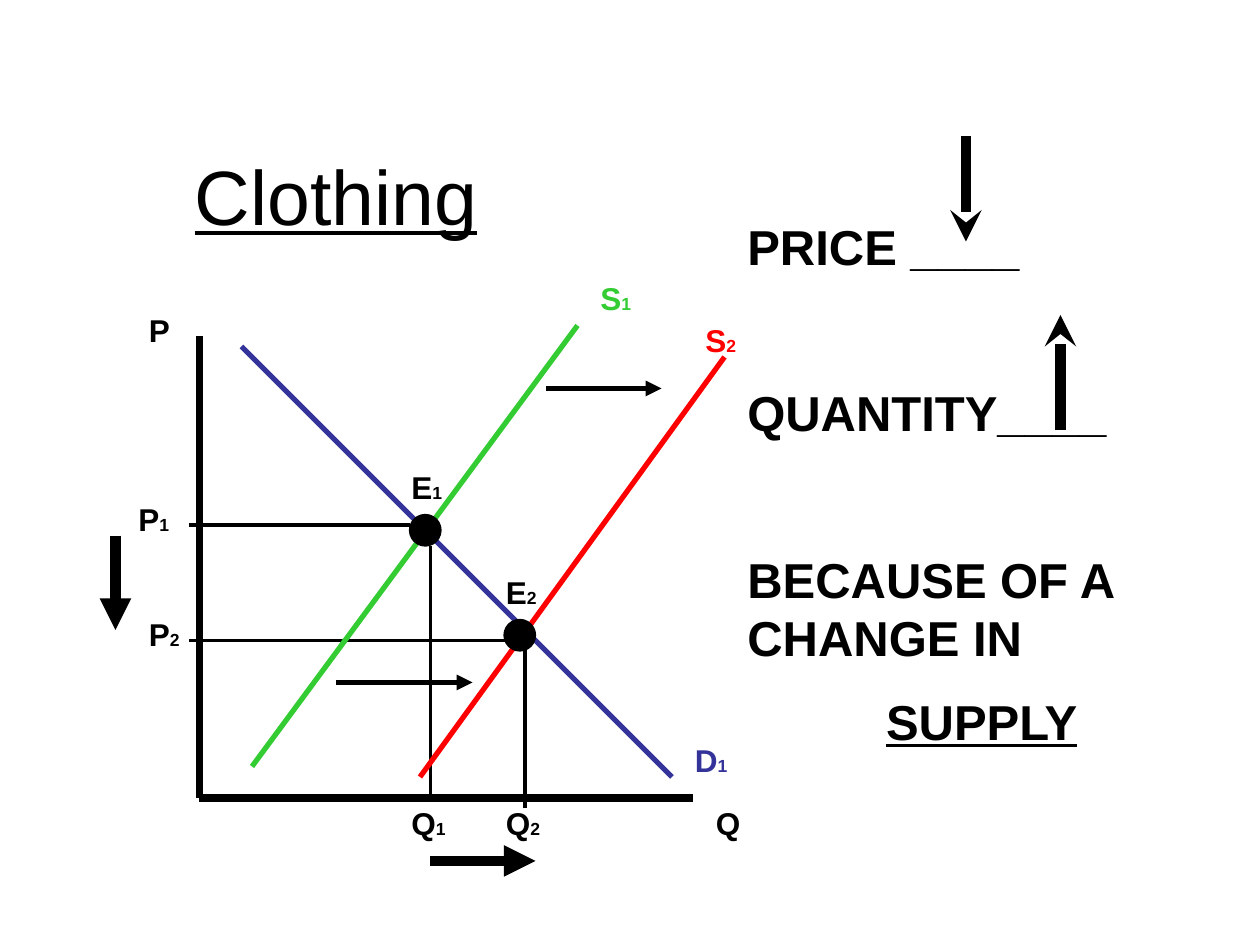
from lxml import etree
from pptx import Presentation
from pptx import util as u
from pptx.dml.color import RGBColor
from pptx.enum import shapes, text
from pptx.oxml import ns

BLACK = RGBColor(0x00, 0x00, 0x00)
DEMAND = RGBColor(0x33, 0x33, 0x99)
SUPPLY_OLD = RGBColor(0x33, 0xCC, 0x33)
SUPPLY_NEW = RGBColor(0xFF, 0x00, 0x00)
FONT = "Arial"

COLUMNS, ROWS = 120, 90
WIDTH, HEIGHT = u.Inches(10), u.Inches(7.5)


def grid(column, row):
    return round(WIDTH * column / COLUMNS), round(HEIGHT * row / ROWS)


def style(font, size, color=BLACK, bold=False):
    font.name = FONT
    font.size = u.Pt(size)
    font.bold = bold
    font.color.rgb = color


def add_title(slide, wording):
    title = slide.shapes.title
    title.left, title.top = grid(5, 11)
    title.width, title.height = grid(54, 15)
    title.text_frame.text = wording
    title.text_frame.vertical_anchor = text.MSO_ANCHOR.MIDDLE
    heading = title.text_frame.paragraphs[0]
    heading.alignment = text.PP_ALIGN.CENTER
    style(heading.font, 44)
    heading.font.underline = True


def add_line(slide, start, end, weight, color=BLACK, arrowhead=None):
    line = slide.shapes.add_connector(
        shapes.MSO_CONNECTOR.STRAIGHT, *grid(*start), *grid(*end))
    line.line.color.rgb = color
    line.line.width = u.Pt(weight)
    if arrowhead:
        etree.SubElement(line.line._get_or_add_ln(), ns.qn("a:tailEnd"), type=arrowhead)
    etree.SubElement(line._element.spPr, ns.qn("a:effectLst"))


def add_text_frame(slide, corner, size):
    frame = slide.shapes.add_textbox(*grid(*corner), *grid(*size)).text_frame
    frame.word_wrap = True
    return frame


def add_label(slide, letter, index, corner, color=BLACK):
    frame = add_text_frame(slide, corner, (7 if index else 5, 4.8))
    paragraph = frame.paragraphs[0]
    style(paragraph.font, 18, color, bold=True)
    paragraph.add_run().text = letter
    if index:
        subscript = paragraph.add_run()
        subscript.text = index
        subscript.font.size = u.Pt(10)


def add_equilibrium(slide, corner):
    dot = slide.shapes.add_shape(shapes.MSO_SHAPE.OVAL, *grid(*corner), *grid(3, 3))
    dot.shadow.inherit = False
    dot.fill.solid()
    dot.fill.fore_color.rgb = BLACK
    dot.line.color.rgb = BLACK
    dot.line.width = u.Pt(0.75)


def add_conclusion(slide):
    frame = add_text_frame(slide, (70, 20), (47, 54.5))
    statements = [("PRICE ____", 0), ("QUANTITY____", 61.5),
                  ("BECAUSE OF A CHANGE IN", 61.5), ("SUPPLY", 14)]
    for position, (wording, gap) in enumerate(statements):
        paragraph = frame.paragraphs[0] if position == 0 else frame.add_paragraph()
        paragraph.text = wording
        paragraph.space_before = u.Pt(gap)
        style(paragraph.font, 28, bold=True)
    paragraph.alignment = text.PP_ALIGN.CENTER
    paragraph.font.underline = True


def main():
    prs = Presentation()
    prs.slide_width, prs.slide_height = WIDTH, HEIGHT
    slide = prs.slides.add_slide(prs.slide_layouts[5])
    add_title(slide, "Clothing")

    origin = (19, 76)
    for axis_end in [(19, 32), (66, 76)]:
        add_line(slide, axis_end, origin, 4.5)

    guides = [((18, 50), (39, 50)), ((41, 76), (41, 52)),
              ((18, 61), (49, 61)), ((50, 77), (50, 61))]
    for start, end in guides:
        add_line(slide, start, end, 2.25)

    curves = [((23, 33), (64, 74), DEMAND),
              ((24, 73), (55, 31), SUPPLY_OLD),
              ((40, 74), (69, 34), SUPPLY_NEW)]
    for start, end, color in curves:
        add_line(slide, start, end, 3, color)

    for corner in [(39, 49), (48, 59)]:
        add_equilibrium(slide, corner)

    labels = [("P", "", (13, 29), BLACK), ("Q", "", (67, 76), BLACK),
              ("D", "1", (65, 70), DEMAND),
              ("S", "1", (56, 26), SUPPLY_OLD), ("S", "2", (66, 30), SUPPLY_NEW),
              ("E", "1", (38, 44), BLACK), ("E", "2", (47, 54), BLACK),
              ("P", "1", (12, 47), BLACK), ("P", "2", (13, 58), BLACK),
              ("Q", "1", (38, 76), BLACK), ("Q", "2", (47, 76), BLACK)]
    for letter, index, corner, color in labels:
        add_label(slide, letter, index, corner, color)

    add_conclusion(slide)

    arrows = [((52, 37), (63, 37), 3, "triangle"),
              ((32, 65), (45, 65), 3, "triangle"),
              ((11, 51), (11, 60), 6, "triangle"),
              ((41, 82), (51, 82), 6, "triangle"),
              ((92, 13), (92, 23), 6, "stealth"),
              ((101, 41), (101, 30), 6, "stealth")]
    for start, end, weight, arrowhead in arrows:
        add_line(slide, start, end, weight, arrowhead=arrowhead)

    prs.save("out.pptx")


if __name__ == "__main__":
    main()
